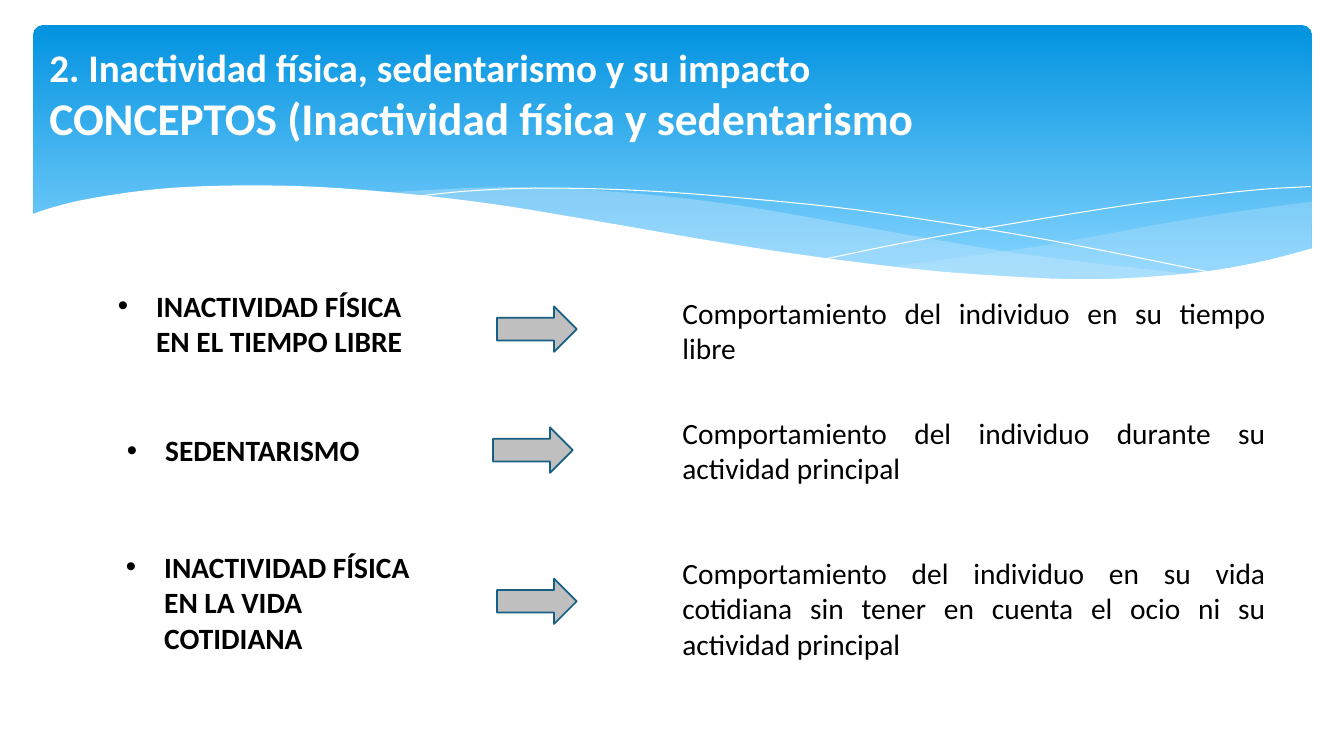
from lxml import etree
from pptx import Presentation
from pptx import util as u
from pptx.dml.color import RGBColor
from pptx.enum import shapes, text
from pptx.oxml.ns import qn

HUES = {"top": "0293E0", "base": "83D3FE", "wave": "C6E7FC", "white": "FFFFFF",
        "black": "000000", "gray": "BFBFBF", "edge": "195F84"}


def smooth(pts, steps=5):
    """Points along a Catmull-Rom curve through pts."""
    ends = [pts[0], *pts, pts[-1]]
    out = [pts[0]]
    for a, b, c, d in zip(ends, ends[1:], ends[2:], ends[3:]):
        for i in range(1, steps + 1):
            t = i / steps
            out.append(tuple(
                q + t / 2 * (r - p + t * (2 * p - 5 * q + 4 * r - s
                                          + t * (3 * q - p - 3 * r + s)))
                for p, q, r, s in zip(a, b, c, d)))
    return out


class Deck:
    font = "Calibri"

    def __init__(self, wide, high):
        self.prs = Presentation()
        self.prs.slide_width = u.Inches(wide)
        self.prs.slide_height = u.Inches(high)
        self.slide = self.prs.slides.add_slide(self.prs.slide_layouts[5])
        self.items = self.slide.shapes

    def hue(self, name):
        return RGBColor.from_string(HUES[name])

    def paint(self, shape, fill=None, line=None, width=0, alpha=None):
        shape.shadow.inherit = False
        if fill:
            shape.fill.solid()
            shape.fill.fore_color.rgb = self.hue(fill)
        else:
            shape.fill.background()
        if alpha:
            clr = shape._element.spPr.find(".//" + qn("a:srgbClr"))
            etree.SubElement(clr, qn("a:alpha")).set("val", str(alpha * 1000))
        if line:
            shape.line.color.rgb = self.hue(line)
            shape.line.width = u.Pt(width)
        else:
            shape.line.fill.background()

    def style(self, run, size, color, bold):
        form = {"name": self.font, "size": u.Pt(size), "bold": bold}
        for key, val in form.items():
            setattr(run.font, key, val)
        run.font.color.rgb = self.hue(color)

    def panel(self, box):
        shape = self.items.add_shape(shapes.MSO_SHAPE.ROUNDED_RECTANGLE,
                                     *map(u.Inches, box))
        shape.adjustments[0] = 0.034
        self.paint(shape)
        shape.fill.gradient()
        shape.fill.gradient_angle = 270
        for stop, (pos, name) in zip(shape.fill.gradient_stops,
                                     [(0, "top"), (0.9, "base")]):
            stop.position = pos
            stop.color.rgb = self.hue(name)

    def curve(self, *parts, close=True, **look):
        """One outline made of several smooth parts."""
        pts = [(u.Inches(x), u.Inches(y))
               for part in parts for x, y in smooth(part)]
        pen = self.items.build_freeform(*pts[0])
        pen.add_line_segments(pts[1:], close=close)
        self.paint(pen.convert_to_shape(), **look)

    def arrow(self, left, top):
        shape = self.items.add_shape(shapes.MSO_SHAPE.RIGHT_ARROW,
                                     *map(u.Inches, (left, top, 0.79, 0.45)))
        self.paint(shape, fill="gray", line="edge", width=1.25)

    def words(self, box, copy, bullet=False):
        frame = self.items.add_textbox(*map(u.Inches, box)).text_frame
        frame.word_wrap = True
        para = frame.paragraphs[0]
        if bullet:
            props = para._p.get_or_add_pPr()
            props.set("marL", str(u.Inches(0.38)))
            props.set("indent", str(-u.Inches(0.38)))
            etree.SubElement(props, qn("a:buFont")).set("typeface", "Arial")
            etree.SubElement(props, qn("a:buChar")).set("char", "•")
        else:
            para.alignment = text.PP_ALIGN.JUSTIFY
        run = para.add_run()
        run.text = copy
        self.style(run, 21, "black", bullet)

    def title(self, box, lines):
        shape = self.items.title
        for key, val in zip(("left", "top", "width", "height"), box):
            setattr(shape, key, u.Inches(val))
        frame = shape.text_frame
        form = {"margin_left": u.Inches(0.12), "margin_right": u.Inches(0.12),
                "margin_top": u.Inches(0.06), "margin_bottom": u.Inches(0.06),
                "word_wrap": True, "auto_size": text.MSO_AUTO_SIZE.NONE,
                "vertical_anchor": text.MSO_ANCHOR.MIDDLE}
        for key, val in form.items():
            setattr(frame, key, val)
        para = frame.paragraphs[0]
        para.alignment = text.PP_ALIGN.LEFT
        for i, (copy, size) in enumerate(lines):
            if i:
                para.add_line_break()
            run = para.add_run()
            run.text = copy
            self.style(run, size, "white", True)
        # Bring the title in front of the banner
        self.items._spTree.append(shape._element)


def main():
    deck = Deck(13.33, 7.5)

    # Banner with waves
    deck.panel((0.33, 0.25, 12.68, 2.7))
    deck.curve([(13.01, 2), (12.27, 2.1), (11.47, 2.23), (10.38, 2.43),
                (9.41, 2.57), (8.82, 2.65)],
               [(8.82, 2.65), (9.58, 2.73), (10.25, 2.77), (10.85, 2.78),
                (11.5, 2.75), (12.07, 2.69), (12.56, 2.59), (13.01, 2.47)],
               fill="wave", alpha=29)
    deck.curve([(11.9, 2.73), (10.76, 2.6), (9.88, 2.48), (8.38, 2.22),
                (7.4, 2.05), (6.52, 1.94), (5.6, 1.87), (4.82, 1.86),
                (3.82, 1.91)],
               [(3.82, 1.91), (4.83, 2.03), (5.99, 2.22), (7.06, 2.4),
                (8.02, 2.55), (9.07, 2.68), (9.98, 2.76), (10.76, 2.79),
                (11.43, 2.77), (11.9, 2.73)],
               fill="wave", alpha=40)
    deck.curve([(4.12, 1.95), (4.58, 1.9), (5.16, 1.87), (5.77, 1.87),
                (6.52, 1.9), (7.42, 1.97), (8.48, 2.08), (9.69, 2.26),
                (10.6, 2.42), (12.1, 2.72)], close=False, line="white")
    deck.curve([(8.18, 2.57), (8.96, 2.41), (9.97, 2.23), (11.15, 2.04),
                (11.94, 1.94), (12.5, 1.88), (13, 1.85)],
               close=False, line="white")
    deck.curve([(13.03, 2.46), (12.53, 2.59), (11.98, 2.69), (11.34, 2.75),
                (10.78, 2.77), (10.15, 2.75), (9.18, 2.68), (8.04, 2.54),
                (7.06, 2.39), (5.96, 2.2), (4.86, 2.02), (3.9, 1.91),
                (3.06, 1.85), (2.35, 1.84), (1.76, 1.86), (1.27, 1.91),
                (0.79, 1.99), (0.48, 2.07), (0.31, 2.13)],
               [(0.31, 3.29), (13.03, 3.29)], fill="white")

    # Concept, arrow and meaning, row by row
    rows = [
        ("INACTIVIDAD FÍSICA EN EL TIEMPO LIBRE", (1.07, 2.81, 3.31, 0.81),
         (4.93, 3.04), "Comportamiento del individuo en su tiempo libre",
         2.88, 0.81),
        ("SEDENTARISMO", (1.16, 4.24, 3.31, 0.45), (4.89, 4.24),
         "Comportamiento del individuo durante su actividad principal",
         4.07, 0.81),
        ("INACTIVIDAD FÍSICA EN LA VIDA COTIDIANA", (1.15, 5.4, 3.31, 1.16),
         (4.93, 5.74), "Comportamiento del individuo en su vida cotidiana "
         "sin tener en cuenta el ocio ni su actividad principal", 5.46, 1.16),
    ]
    for term, box, tip, sense, top, high in rows:
        deck.words(box, term, bullet=True)
        deck.arrow(*tip)
        deck.words((6.67, top, 5.98, high), sense)

    # Title
    deck.title((0.37, 0.36, 10.16, 1.14),
               [("2. Inactividad física, sedentarismo y su impacto", 27.9),
                ("CONCEPTOS (Inactividad física y sedentarismo", 32.4)])
    deck.prs.save("out.pptx")


if __name__ == "__main__":
    main()
